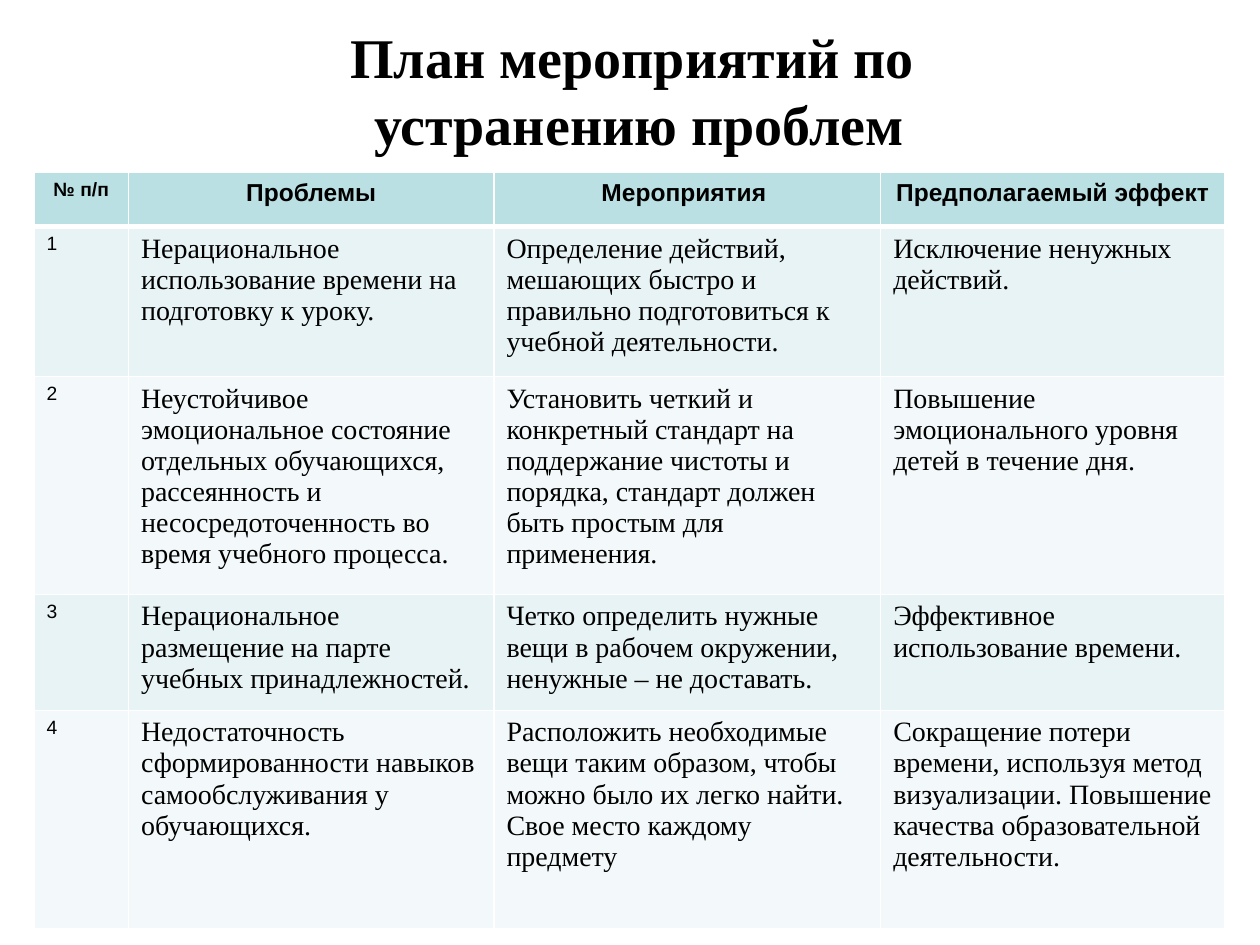
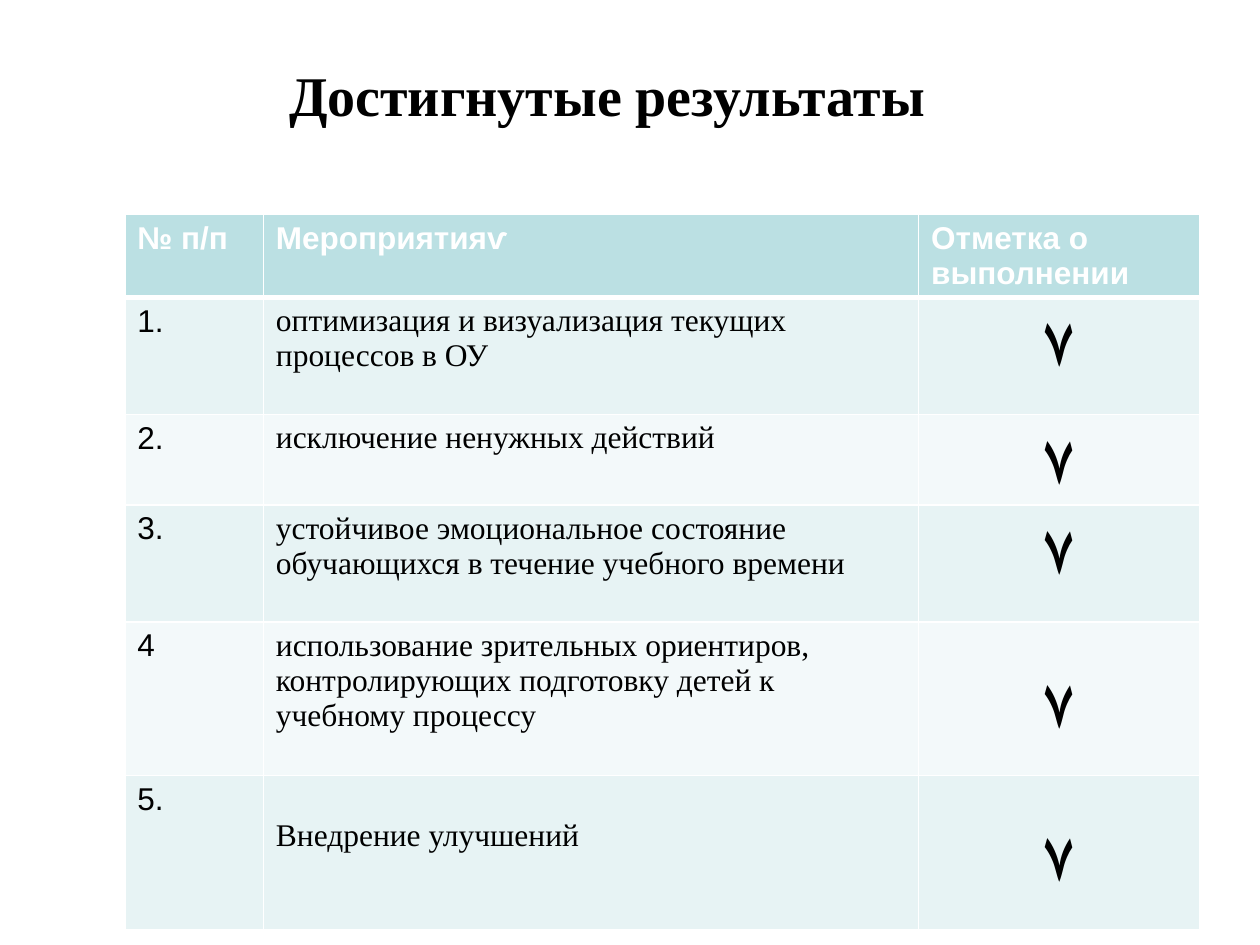
import lxml.etree
import pptx
import pptx.util
import pptx.oxml.ns
import pptx.dml.color
import pptx.enum.text

Inches = pptx.util.Inches
Pt = pptx.util.Pt
RGB = pptx.dml.color.RGBColor
LEFT = pptx.enum.text.PP_ALIGN.LEFT
MID = pptx.enum.text.PP_ALIGN.CENTER

BLACK = RGB(0x00, 0x00, 0x00)
WHITE = RGB(0xFF, 0xFF, 0xFF)
HEAD = RGB(0xBB, 0xE0, 0xE3)
BANDS = RGB(0xE7, 0xF3, 0xF4), RGB(0xF3, 0xF9, 0xFA)

SANS = "Arial"
SERIF = "Times New Roman"
TICK = "۷"
GAP = 0.05    # top margin of a cell
DROP = 0.34   # top margin of a cell whose text sits one line lower
RULE = 3      # points, line under the header row

# A style is (font, size, bold, colour, alignment), one for each column.
PLAN = {
    "title": "План мероприятий по\v устранению проблем",
    "box": (2.66, 0.12, 4.72, 1.18),
    "at": (0.27, 1.37),
    "cols": (0.75, 2.9, 3.07, 2.73),
    "rows": (0.43, 1.19, 1.73, 0.92, 1.73),
    "head": [(SANS, 11, True, BLACK, MID)] + [(SANS, 14, True, BLACK, MID)] * 3,
    "body": [(SANS, 11, False, BLACK, LEFT)] + [(SERIF, 16, False, BLACK, LEFT)] * 3,
    "low": (),
    "cells": [
        ("№ п/п", "Проблемы", "Мероприятия ", "Предполагаемый эффект"),
        ("1",
         "Нерациональное использование времени на подготовку к уроку.",
         "Определение действий, мешающих быстро и правильно подготовиться "
         "к учебной деятельности.",
         "Исключение ненужных действий."),
        ("2",
         "Неустойчивое эмоциональное состояние отдельных обучающихся, "
         "рассеянность и несосредоточенность во время учебного процесса.",
         "Установить четкий и конкретный стандарт на поддержание чистоты "
         "и порядка, стандарт должен быть простым для применения.",
         "Повышение эмоционального уровня детей в течение дня."),
        ("3",
         "Нерациональное размещение на парте учебных принадлежностей.",
         "Четко определить нужные вещи в рабочем окружении, "
         "ненужные – не доставать.",
         "Эффективное использование времени."),
        ("4",
         "Недостаточность сформированности навыков самообслуживания "
         "у обучающихся.",
         "Расположить необходимые вещи таким образом, чтобы можно было "
         "их легко найти. Свое место каждому предмету",
         "Сокращение потери времени, используя метод визуализации. "
         "Повышение качества образовательной деятельности."),
    ],
}

RESULTS = {
    "title": "Достигнутые результаты",
    "box": (2.17, 0.43, 5.3, 0.64),
    "at": (0.99, 1.7),
    "cols": (1.1, 5.2, 2.23),
    "rows": (0.66, 0.93, 0.66, 0.93, 1.22, 1.22),
    "head": [(SANS, 18, True, WHITE, LEFT)] * 3,
    "body": [(SANS, 18, False, BLACK, LEFT), (SERIF, 18, False, BLACK, LEFT),
             (SANS, 40, True, BLACK, MID)],
    "low": ((4, 2), (5, 1), (5, 2)),
    "cells": [
        ("№ п/п", "Мероприятияⱱ", "Отметка о выполнении"),
        ("1.", "оптимизация и визуализация текущих процессов в ОУ", TICK),
        ("2.", "исключение ненужных действий", TICK),
        ("3.", "устойчивое эмоциональное состояние обучающихся "
               "в течение учебного времени", TICK),
        ("4", "использование зрительных ориентиров, контролирующих "
              "подготовку детей к учебному процессу", TICK),
        ("5.", "Внедрение улучшений", TICK),
    ],
}


def add_node(parent, tag, **attrs):
    return lxml.etree.SubElement(parent, pptx.oxml.ns.qn(tag), attrs)


def write(frame, text, style):
    frame.text = text
    para = frame.paragraphs[0]
    name, size, bold, color, para.alignment = style
    font = para.font
    font.name, font.size, font.bold = name, Pt(size), bold
    font.color.rgb = color
    if text == TICK:  # right-to-left script takes its own typeface
        props = para._p.find(".//" + pptx.oxml.ns.qn("a:defRPr"))
        add_node(props, "a:cs", typeface=name)


def underline(cell):
    """Draw the thick line below a header cell; call before the fill is set."""
    props = cell._tc.get_or_add_tcPr()
    line = add_node(props, "a:lnB", w=str(Pt(RULE)))
    add_node(add_node(line, "a:solidFill"), "a:srgbClr", val=str(WHITE))


def add_title(slide, text, box):
    frame = slide.shapes.add_textbox(*map(Inches, box)).text_frame
    frame.word_wrap = False
    frame.vertical_anchor = pptx.enum.text.MSO_ANCHOR.MIDDLE
    write(frame, text, (SERIF, 32, True, BLACK, MID))


def add_grid(slide, data):
    cols, rows = data["cols"], data["rows"]
    size = sum(cols), sum(rows)
    table = slide.shapes.add_table(
        len(rows), len(cols), *map(Inches, data["at"] + size)).table
    for col, width in zip(table.columns, cols):
        col.width = Inches(width)
    for row, height in zip(table.rows, rows):
        row.height = Inches(height)
    for r, line in enumerate(data["cells"]):
        styles = data["body"] if r else data["head"]
        for c, (text, style) in enumerate(zip(line, styles)):
            cell = table.cell(r, c)
            if r == 0:
                underline(cell)
            cell.fill.solid()
            cell.fill.fore_color.rgb = BANDS[(r - 1) % 2] if r else HEAD
            cell.margin_top = Inches(DROP if (r, c) in data["low"] else GAP)
            cell.margin_bottom = 0
            write(cell.text_frame, text, style)


def main():
    deck = pptx.Presentation()
    deck.slide_width, deck.slide_height = Inches(10), Inches(7.5)
    for data in (PLAN, RESULTS):
        slide = deck.slides.add_slide(deck.slide_layouts[6])
        add_title(slide, data["title"], data["box"])
        add_grid(slide, data)
    deck.save("out.pptx")


if __name__ == "__main__":
    main()
